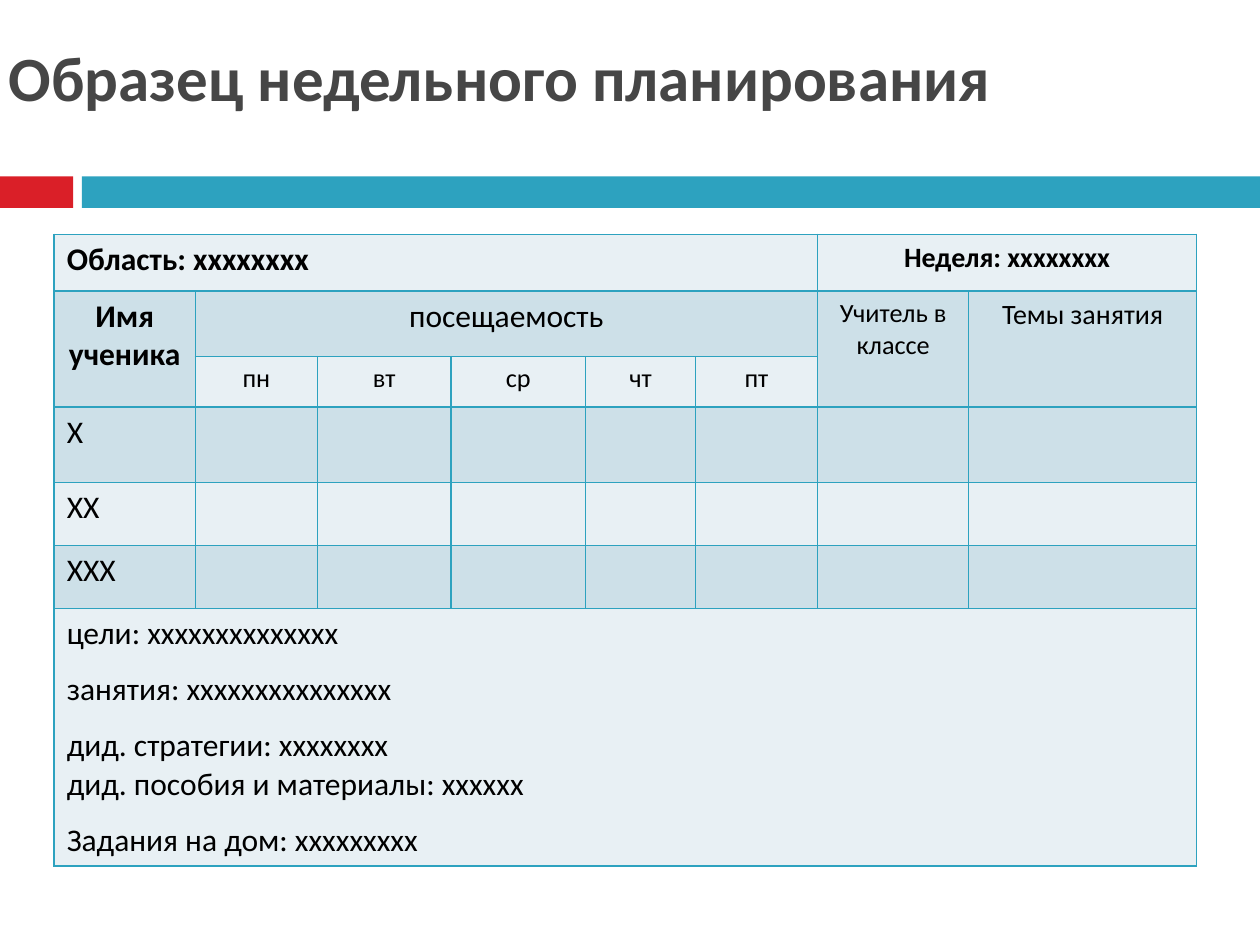
from lxml import etree
from pptx import Presentation
from pptx.dml.color import RGBColor
from pptx.enum.shapes import MSO_SHAPE
from pptx.enum.text import MSO_ANCHOR, MSO_AUTO_SIZE, PP_ALIGN
from pptx.oxml.ns import qn
from pptx.util import Inches, Pt

LEFT, CENTER = PP_ALIGN.LEFT, PP_ALIGN.CENTER
RECT = MSO_SHAPE.RECTANGLE
MIDDLE = MSO_ANCHOR.MIDDLE
NO_FIT = MSO_AUTO_SIZE.NONE

FONT = "Calibri"
COLORS = {"red": "DA1F28", "teal": "2DA2BF", "title": "464646",
          "text": "000000", "light": "E8F0F4", "dark": "CDE0E8"}

TITLE = "Образец недельного планирования"
BARS = [("red", 0, 0.58), ("teal", 0.65, 9.35)]  # colour, left, width

COL_WIDTHS = [1.12, 0.97, 1.06, 1.07, 0.87, 0.97, 1.2, 1.81]
ROW_HEIGHTS = [0.45, 0.52, 0.4, 0.6, 0.5, 0.5, 2.03]
DAYS = ["пн", "вт", "ср", "чт", "пт"]
STUDENTS = ["X", "XX", "XXX"]
FIRST_DAY_COL, DAY_ROW, FIRST_STUDENT_ROW, NOTES_ROW = 1, 2, 3, 6

# row, column, row span, column span, text, format
HEADERS = [
    (0, 0, 1, 6, "Область: xxxxxxxx", {"bold": True}),
    (0, 6, 1, 2, "Неделя: xxxxxxxx", {"size": 16, "bold": True, "align": CENTER}),
    (1, 0, 2, 1, "Имя ученика", {"bold": True, "align": CENTER}),
    (1, 1, 1, 5, "посещаемость", {"align": CENTER}),
    (1, 6, 2, 1, "Учитель в классе", {"size": 15, "align": CENTER}),
    (1, 7, 2, 1, "Темы занятия", {"size": 16, "align": CENTER}),
]
# text, space before in points
NOTES = [
    ("цели: xxxxxxxxxxxxxx", 0),
    ("занятия: xxxxxxxxxxxxxxx", 10),
    ("дид. стратегии: xxxxxxxx", 10),
    ("дид. пособия и материалы: xxxxxx", 0),
    ("Задания на дом: xxxxxxxxx", 10),
]


def rgb(name):
    return RGBColor.from_string(COLORS[name])


def write(p, text, size=18, bold=False, color="text", align=LEFT, before=0):
    p.alignment = align
    p.space_before = Pt(before)
    r = p.add_run()
    r.text = text
    r.font.name = FONT
    r.font.size = Pt(size)
    r.font.bold = bold
    r.font.color.rgb = rgb(color)


def set_borders(cell):
    """Draw a 1 pt line on each side; borders must precede the fill in tcPr."""
    tc_pr = cell._tc.get_or_add_tcPr()
    for i, side in enumerate(("lnL", "lnR", "lnT", "lnB")):
        ln = etree.Element(qn(f"a:{side}"), w=str(Pt(1)))
        fill = etree.SubElement(ln, qn("a:solidFill"))
        etree.SubElement(fill, qn("a:srgbClr"), val=COLORS["teal"])
        tc_pr.insert(i, ln)


def add_title(s):
    title = s.shapes.title
    title.left, title.top = Inches(-0.03), Inches(0.29)
    title.width, title.height = Inches(8.5), Inches(0.63)
    tf = title.text_frame
    tf.word_wrap = True
    tf.auto_size = NO_FIT
    tf.vertical_anchor = MIDDLE
    write(tf.paragraphs[0], TITLE, size=36, bold=True, color="title")


def add_bars(s):
    for color, left, width in BARS:
        bar = s.shapes.add_shape(RECT, Inches(left), Inches(1.4), Inches(width), Inches(0.25))
        bar.shadow.inherit = False
        bar.fill.solid()
        bar.fill.fore_color.rgb = rgb(color)
        bar.line.fill.background()


def add_plan(s):
    frame = s.shapes.add_table(len(ROW_HEIGHTS), len(COL_WIDTHS), Inches(0.43), Inches(1.86),
                               Inches(sum(COL_WIDTHS)), Inches(sum(ROW_HEIGHTS)))
    table = frame.table
    for col, width in zip(table.columns, COL_WIDTHS):
        col.width = Inches(width)
    for i, (row, height) in enumerate(zip(table.rows, ROW_HEIGHTS)):
        row.height = Inches(height)
        for cell in row.cells:
            cell.fill.solid()
            cell.fill.fore_color.rgb = rgb("dark" if i % 2 else "light")
            set_borders(cell)

    for row, col, row_span, col_span, text, fmt in HEADERS:
        cell = table.cell(row, col)
        cell.merge(table.cell(row + row_span - 1, col + col_span - 1))
        write(cell.text_frame.paragraphs[0], text, **fmt)
    for col, day in enumerate(DAYS, FIRST_DAY_COL):
        write(table.cell(DAY_ROW, col).text_frame.paragraphs[0], day, size=15, align=CENTER)
    for row, student in enumerate(STUDENTS, FIRST_STUDENT_ROW):
        write(table.cell(row, 0).text_frame.paragraphs[0], student)

    notes = table.cell(NOTES_ROW, 0)
    notes.merge(table.cell(NOTES_ROW, len(COL_WIDTHS) - 1))
    tf = notes.text_frame
    for i, (text, before) in enumerate(NOTES):
        p = tf.add_paragraph() if i else tf.paragraphs[0]
        write(p, text, before=before)


def main():
    prs = Presentation()
    prs.slide_width, prs.slide_height = Inches(10), Inches(7.5)
    s = prs.slides.add_slide(prs.slide_layouts[5])
    add_bars(s)
    add_title(s)
    add_plan(s)
    prs.save("out.pptx")


if __name__ == "__main__":
    main()
